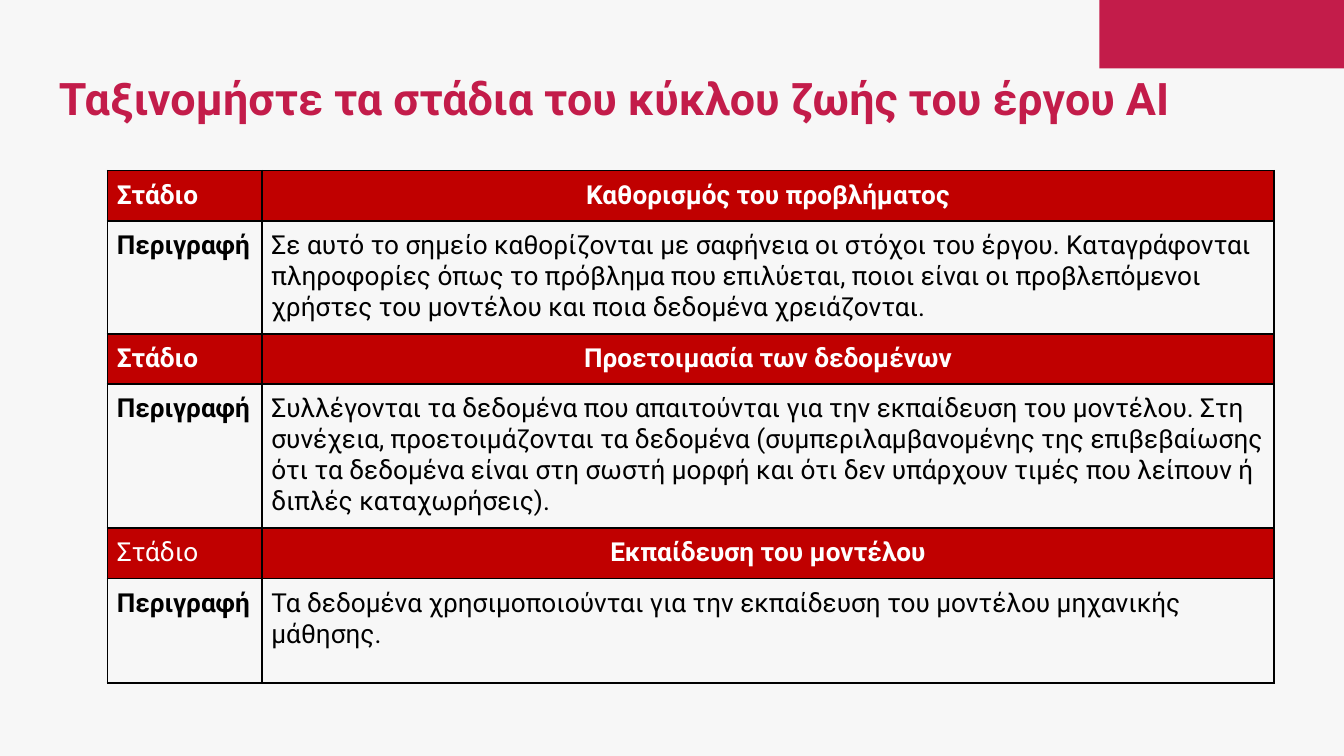
"""Build the slide that sorts the stages of the AI project life cycle."""
from dataclasses import dataclass

from lxml.etree import SubElement
from pptx import Presentation
from pptx.dml.color import RGBColor
from pptx.enum.shapes import MSO_SHAPE
from pptx.enum.text import MSO_ANCHOR, PP_ALIGN
from pptx.oxml.ns import qn
from pptx.util import Inches, Pt

COLORS = {
    "background": "F7F7F7",
    "accent": "C31C4A",
    "header": "C00000",
    "white": "FFFFFF",
    "black": "000000",
}
COLUMN_WIDTHS = (1.15, 7.53)
HEADER_HEIGHT = 0.36
CELL_MARGIN = 0.07


@dataclass(frozen=True)
class Stage:
    """One life cycle stage with its description and row format."""

    name: str
    description: str
    height: float = 0.64
    bold_label: bool = True


STAGES = (
    Stage(
        "Καθορισμός του προβλήματος",
        "Σε αυτό το σημείο καθορίζονται με σαφήνεια οι στόχοι του έργου. "
        "Καταγράφονται πληροφορίες όπως το πρόβλημα που επιλύεται, ποιοι είναι "
        "οι προβλεπόμενοι χρήστες του μοντέλου και ποια δεδομένα χρειάζονται.",
    ),
    Stage(
        "Προετοιμασία των δεδομένων",
        "Συλλέγονται τα δεδομένα που απαιτούνται για την εκπαίδευση του μοντέλου. "
        "Στη συνέχεια, προετοιμάζονται τα δεδομένα (συμπεριλαμβανομένης της "
        "επιβεβαίωσης ότι τα δεδομένα είναι στη σωστή μορφή και ότι δεν υπάρχουν "
        "τιμές που λείπουν ή διπλές καταχωρήσεις).",
    ),
    Stage(
        "Εκπαίδευση του μοντέλου",
        "Τα δεδομένα χρησιμοποιούνται για την εκπαίδευση του μοντέλου μηχανικής μάθησης.",
        height=0.78,
        bold_label=False,
    ),
)


def rgb(name: str) -> RGBColor:
    """Return a named colour."""
    return RGBColor.from_string(COLORS[name])


def write_text(frame, text: str, *, size: float = 14, color: str = "black",
               bold: bool = False, align=PP_ALIGN.LEFT) -> None:
    """Write one formatted paragraph into a text frame."""
    frame.word_wrap = True
    paragraph = frame.paragraphs[0]
    paragraph.alignment = align
    run = paragraph.add_run()
    run.text = text
    run.font.name = "Roboto"
    run.font.size = Pt(size)
    run.font.bold = bold
    run.font.color.rgb = rgb(color)


def add_borders(cell) -> None:
    """Give all four sides of a cell a thin black line."""
    properties = cell._tc.get_or_add_tcPr()
    for side in ("lnL", "lnR", "lnT", "lnB"):
        line = SubElement(properties, qn(f"a:{side}"), w=str(Pt(1)))
        fill = SubElement(line, qn("a:solidFill"))
        SubElement(fill, qn("a:srgbClr"), val=COLORS["black"])


def fill_cell(cell, text: str, *, header: bool = False, **text_format) -> None:
    """Format one table cell and write its text."""
    cell.margin_left = cell.margin_right = Inches(CELL_MARGIN)
    cell.margin_top = cell.margin_bottom = Inches(CELL_MARGIN)
    add_borders(cell)
    if header:
        cell.fill.solid()
        cell.fill.fore_color.rgb = rgb("header")
    else:
        cell.fill.background()
    write_text(cell.text_frame, text, color="white" if header else "black", **text_format)


def add_title(slide, text: str) -> None:
    """Add the slide title."""
    frame = slide.shapes.add_textbox(
        Inches(0.34), Inches(0.34), Inches(9.32), Inches(0.77)).text_frame
    frame.margin_left = frame.margin_right = Inches(0.1)
    frame.margin_top = frame.margin_bottom = Inches(0.1)
    frame.vertical_anchor = MSO_ANCHOR.MIDDLE
    write_text(frame, text, size=24, color="accent", bold=True)


def add_corner_block(slide) -> None:
    """Add the coloured block in the top right corner."""
    block = slide.shapes.add_shape(
        MSO_SHAPE.RECTANGLE, Inches(8.18), Inches(0), Inches(1.82), Inches(0.51))
    block.shadow.inherit = False
    block.fill.solid()
    block.fill.fore_color.rgb = rgb("accent")
    block.line.fill.background()


def add_stage_table(slide, stages: tuple[Stage, ...]) -> None:
    """Add the table with a header row and a description row per stage."""
    height = sum(HEADER_HEIGHT + stage.height for stage in stages)
    table = slide.shapes.add_table(
        2 * len(stages), len(COLUMN_WIDTHS), Inches(0.8), Inches(1.27),
        Inches(sum(COLUMN_WIDTHS)), Inches(height)).table
    table.first_row = table.horz_banding = False
    for column, width in zip(table.columns, COLUMN_WIDTHS):
        column.width = Inches(width)
    for index, stage in enumerate(stages):
        top = 2 * index
        table.rows[top].height = Inches(HEADER_HEIGHT)
        table.rows[top + 1].height = Inches(stage.height)
        fill_cell(table.cell(top, 0), "Στάδιο", header=True, bold=stage.bold_label)
        fill_cell(table.cell(top, 1), stage.name, header=True, bold=True,
                  align=PP_ALIGN.CENTER)
        fill_cell(table.cell(top + 1, 0), "Περιγραφή", bold=True)
        fill_cell(table.cell(top + 1, 1), stage.description)


def main() -> None:
    """Build and save the presentation."""
    presentation = Presentation()
    presentation.slide_width = Inches(10)
    presentation.slide_height = Inches(10 * 9 / 16)
    slide = presentation.slides.add_slide(presentation.slide_layouts[6])
    slide.background.fill.solid()
    slide.background.fill.fore_color.rgb = rgb("background")
    add_corner_block(slide)
    add_title(slide, "Ταξινομήστε τα στάδια του κύκλου ζωής του έργου AI")
    add_stage_table(slide, STAGES)
    presentation.save("out.pptx")


if __name__ == "__main__":
    main()
